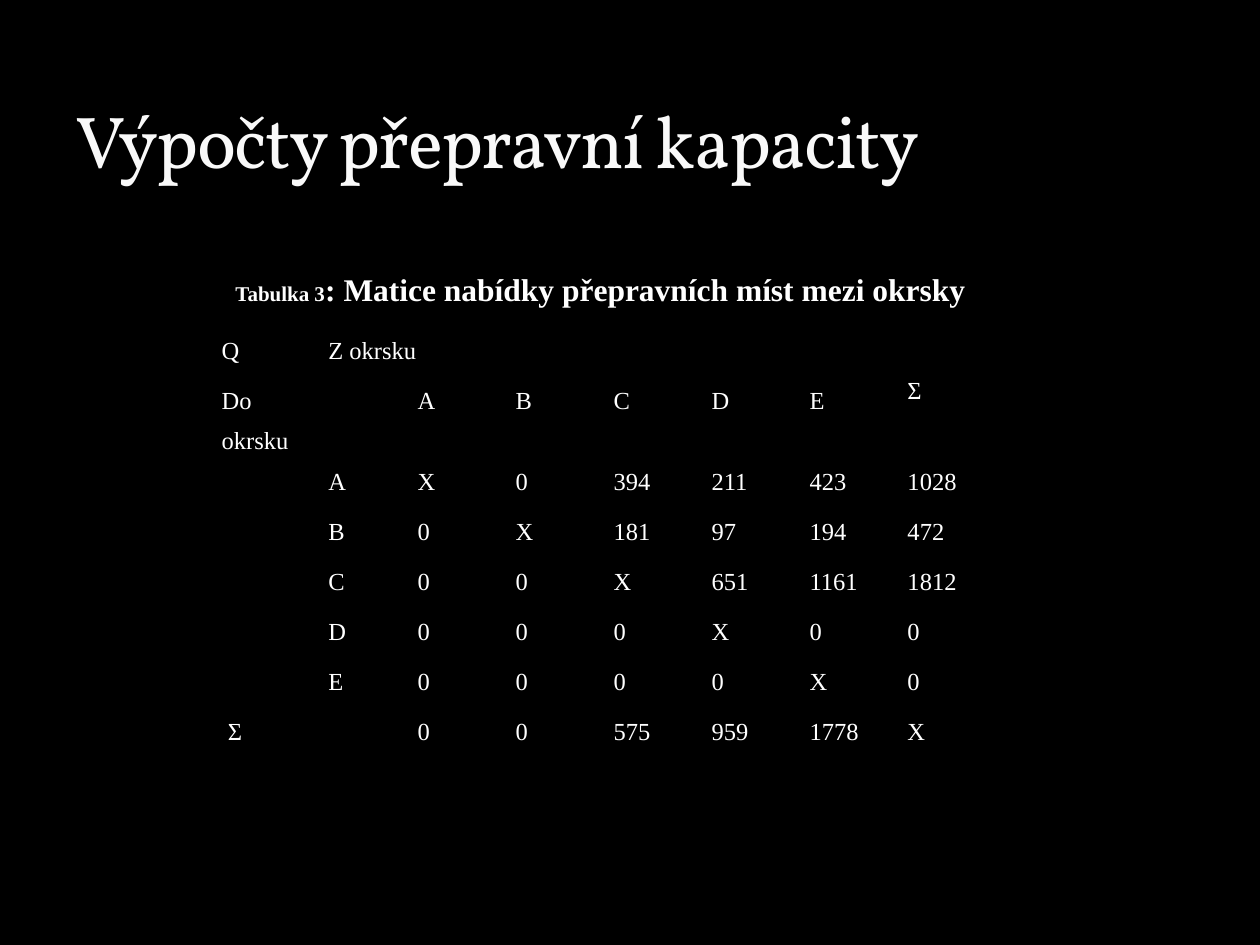
from lxml import etree
from pptx import Presentation
from pptx.dml.color import RGBColor
from pptx.enum.text import MSO_ANCHOR, PP_ALIGN
from pptx.oxml.ns import qn
from pptx.util import Pt

BOTTOM = MSO_ANCHOR.BOTTOM
JUSTIFY = PP_ALIGN.JUSTIFY
BLACK = RGBColor(0x00, 0x00, 0x00)
WHITE = RGBColor(0xFF, 0xFF, 0xFF)
TITLE_COLOR = RGBColor(0xF9, 0xF9, 0xF9)
TITLE_FONT = "Vollkorn"
BODY_FONT = "Times New Roman"

# Content
TITLE = "Výpočty přepravní kapacity"
CAPTION = [("Tabulka 3", 12), (": Matice nabídky přepravních míst mezi okrsky", 18)]
MATRIX = [
    ["Q", "Z okrsku", "", "", "", "", "", "Σ"],
    ["Do okrsku", "", "A", "B", "C", "D", "E", ""],
    ["", "A", "X", "0", "394", "211", "423", "1028"],
    ["", "B", "0", "X", "181", "97", "194", "472"],
    ["", "C", "0", "0", "X", "651", "1161", "1812"],
    ["", "D", "0", "0", "0", "X", "0", "0"],
    ["", "E", "0", "0", "0", "0", "X", "0"],
    [" Σ", "", "0", "0", "575", "959", "1778", "X"],
]
MERGES = [((0, 1), (0, 6)), ((0, 7), (1, 7)), ((1, 0), (6, 0))]

# Layout in points
COLUMN_WIDTHS = [61, 51] + [56] * 6
ROW_HEIGHTS = [28.6] * 7 + [54.6]
TABLE_LEFT, TABLE_TOP = 121.7, 185
CELL_SIDE_MARGIN = 5
SIGMA_TOP_MARGIN = 23  # one text line lower


def style_font(font, name, size, color, bold=False):
    font.name, font.size, font.bold = name, Pt(size), bold
    font.color.rgb = color


def add_text(slide, left, top, width, height):
    frame = slide.shapes.add_textbox(Pt(left), Pt(top), Pt(width), Pt(height)).text_frame
    frame.word_wrap = True
    return frame


def add_borders(cell, color):
    properties = cell._tc.get_or_add_tcPr()
    for side in ("a:lnL", "a:lnR", "a:lnT", "a:lnB"):
        line = etree.SubElement(properties, qn(side), w=str(Pt(1)))
        fill = etree.SubElement(line, qn("a:solidFill"))
        etree.SubElement(fill, qn("a:srgbClr"), val=str(color))


def add_matrix(slide):
    table = slide.shapes.add_table(
        len(MATRIX), len(MATRIX[0]), Pt(TABLE_LEFT), Pt(TABLE_TOP),
        Pt(sum(COLUMN_WIDTHS)), Pt(sum(ROW_HEIGHTS))).table
    table.first_row = table.horz_banding = False
    for column, width in zip(table.columns, COLUMN_WIDTHS):
        column.width = Pt(width)
    for row, height in zip(table.rows, ROW_HEIGHTS):
        row.height = Pt(height)
    for r, values in enumerate(MATRIX):
        for c, value in enumerate(values):
            cell = table.cell(r, c)
            cell.margin_left = cell.margin_right = Pt(CELL_SIDE_MARGIN)
            cell.margin_top = cell.margin_bottom = 0
            add_borders(cell, BLACK)
            cell.fill.background()
            cell.text = value
            paragraph = cell.text_frame.paragraphs[0]
            paragraph.alignment = JUSTIFY
            paragraph.line_spacing = 1.5
            style_font(paragraph.font, BODY_FONT, 14, WHITE)
    for first, last in MERGES:
        table.cell(*first).merge(table.cell(*last))
    table.cell(0, 7).margin_top = Pt(SIGMA_TOP_MARGIN)


def main():
    presentation = Presentation()
    presentation.slide_width, presentation.slide_height = Pt(720), Pt(540)
    slide = presentation.slides.add_slide(presentation.slide_layouts[6])
    slide.background.fill.solid()
    slide.background.fill.fore_color.rgb = BLACK

    # Matrix of offered places
    add_matrix(slide)

    # Title, slightly tightened
    frame = add_text(slide, 36, 12, 648, 96)
    frame.vertical_anchor = BOTTOM
    paragraph = frame.paragraphs[0]
    run = paragraph.add_run()
    run.text = TITLE
    style_font(run.font, TITLE_FONT, 42, TITLE_COLOR)
    run._r.get_or_add_rPr().set("spc", "-100")

    # Table caption
    paragraph = add_text(slide, 127.5, 151, 479, 29).paragraphs[0]
    paragraph.space_after = Pt(10)
    for text, size in CAPTION:
        run = paragraph.add_run()
        run.text = text
        style_font(run.font, BODY_FONT, size, WHITE, bold=True)

    presentation.save("out.pptx")


if __name__ == "__main__":
    main()
